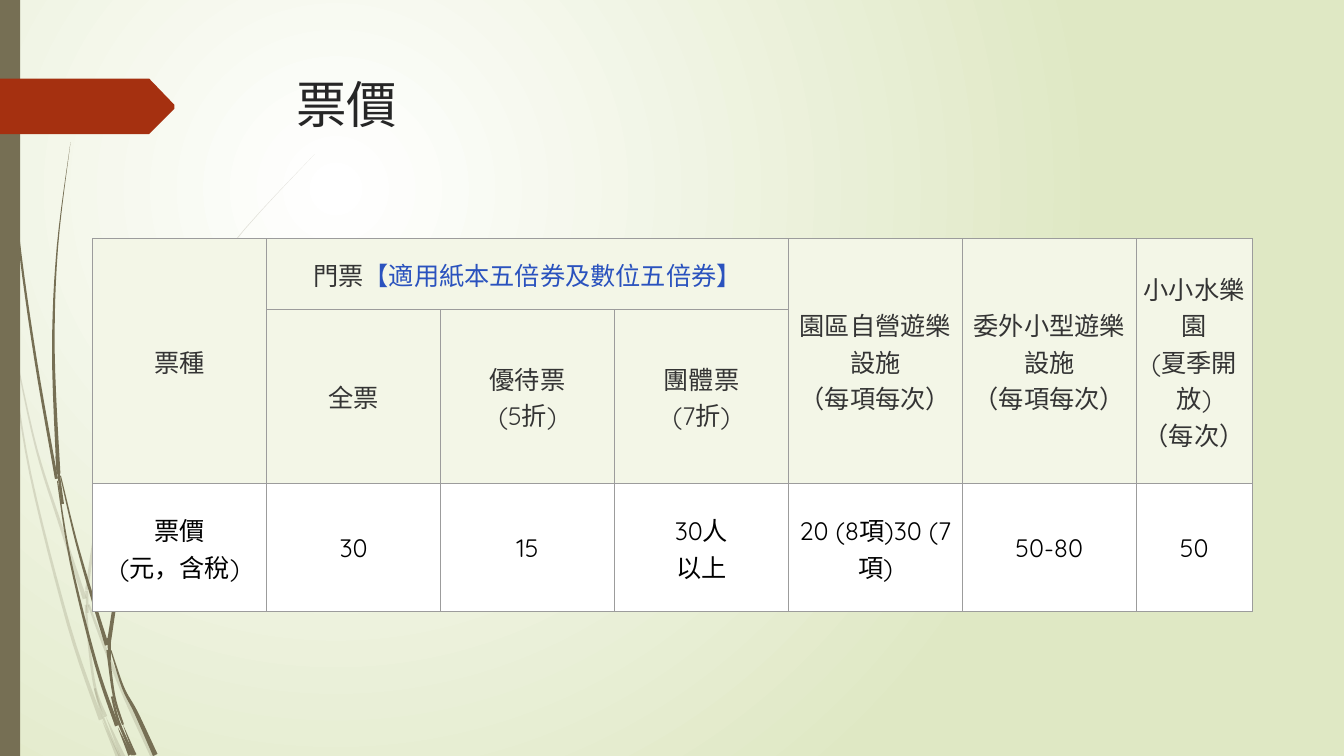
import math

from lxml import etree
from pptx import Presentation
from pptx import util as u
from pptx.dml.color import RGBColor
from pptx.enum import shapes, text
from pptx.oxml import ns

PX = 9144  # EMU in one px, 100 px to the inch
SLIDE = (1333, 750)


class Theme:
    font = "Quicksand"
    title_size, table_size = 36, 18
    glow, meadow = "FFFFFF", "DFE8C4"
    stem, marker = "766F54", "A53010"
    title_ink, head_ink, price_ink, notice = "262626", "343434", "000000", "2A52BE"
    head_fill, price_fill, border = "F3F6E7", "FFFFFF", "9C9C9C"
    border_width = 0.75
    pale = 20  # opacity of the rear grass, percent


TITLE = "票價"
TITLE_BOX = (284, 68, 975, 140)
TABLE_BOX = (92, 237, 1150, 370)
COLUMN_SHARES = [15] * 6 + [10]  # percent of the table width
ROW_HEIGHTS = [70, 173, 127]
MERGES = [((0, 0), (1, 0)), ((0, 1), (0, 3))] + [((0, c), (1, c)) for c in (4, 5, 6)]
NOTICE = "【適用紙本五倍券及數位五倍券】"
ROWS = [
    ["票種", "門票" + NOTICE, "", "", "園區自營遊樂設施\n（每項每次）",
     "委外小型遊樂設施\n（每項每次）", "小小水樂園\n(夏季開放)\n（每次）"],
    ["", "全票", "優待票\n(5折)", "團體票\n(7折)", "", "", ""],
    ["票價\n(元，含稅)", "30", "15", "30人\n以上", "20 (8項)30 (7項)", "50-80", "50"],
]

MARKER = [(173, 108), (148, 133), (0, 133), (0, 78), (148, 78), (173, 104)]

# Each blade of grass: width at the top, width at the foot, points of its middle line
REAR_GRASS = [
    (5, 1, [(0, 291), (6, 315), (11, 350)]),
    (1, 4, [(15, 350), (36, 445), (60, 521), (84, 594)]),
    (2, 5, [(88, 600), (105, 645), (125, 693), (152, 751)]),
    (0, 5, [(105, 711), (122, 751)]),
    (1, 4, [(11, 350), (30, 470), (68, 620), (100, 714)]),
    (2, 3, [(85, 600), (89, 646), (95, 685), (105, 711)]),
    (0, 3, [(312, 153), (229, 244), (159, 348), (108, 462), (86, 585)]),
    (0, 4, [(101, 714), (117, 751)]),
    (3, 2, [(86, 586), (87, 608)]),
    (2, 2, [(94, 683), (102, 711), (119, 751)]),
]
FRONT_GRASS = [
    (1, 3, [(4, 0), (7, 110), (18, 233), (35, 355), (56, 475)]),
    (1, 4, [(60, 472), (75, 535), (91, 591), (106, 640)]),
    (1, 5, [(110, 645), (122, 682), (135, 707), (154, 749)]),
    (1, 4, [(57, 477), (70, 557), (95, 658), (116, 720)]),
    (0, 4, [(70, 141), (57, 245), (53, 349), (58, 470)]),
    (0, 3, [(122, 719), (134, 749)]),
    (2, 3, [(56, 453), (62, 500)]),
    (0, 4, [(260, 344), (205, 405), (157, 475), (124, 551), (108, 637)]),
    (0, 4, [(117, 722), (129, 749)]),
    (3, 2, [(107, 645), (113, 690), (122, 719)]),
    (4, 2, [(108, 633), (109, 655)]),
    (2, 3, [(111, 691), (118, 717), (132, 749)]),
]


def emu(lengths):
    return [u.Emu(round(length * PX)) for length in lengths]


def add_xml(parent, tag, **attributes):
    return etree.SubElement(parent, ns.qn(tag), attributes)


def smooth_line(points, steps=6):
    """Run a Catmull-Rom curve through the points."""
    padded = [points[0], *points, points[-1]]
    curve = []
    for a, b, c, d in zip(padded, padded[1:], padded[2:], padded[3:]):
        for t in (step / steps for step in range(steps)):
            weights = (-t + 2 * t**2 - t**3, 2 - 5 * t**2 + 3 * t**3,
                       t + 4 * t**2 - 3 * t**3, t**3 - t**2)
            curve.append(tuple(sum(w * p[axis] for w, p in zip(weights, (a, b, c, d))) / 2
                               for axis in (0, 1)))
    return curve + [points[-1]]


def blade_outline(top, foot, points):
    """Give the middle line a width that grows evenly from top to foot."""
    curve = smooth_line(points)
    last = len(curve) - 1
    left, right = [], []
    for i, (x, y) in enumerate(curve):
        before, after = curve[max(i - 1, 0)], curve[min(i + 1, last)]
        dx, dy = after[0] - before[0], after[1] - before[1]
        half = (top + (foot - top) * i / last) / 2 / math.hypot(dx, dy)
        left.append((x - dy * half, y + dx * half))
        right.append((x + dy * half, y - dx * half))
    return left + right[::-1]


def paint(shape, color, opacity=100):
    shape.shadow.inherit = False
    shape.line.fill.background()
    shape.fill.solid()
    shape.fill.fore_color.rgb = RGBColor.from_string(color)
    if opacity < 100:
        tint = next(shape.element.spPr.iter(ns.qn("a:srgbClr")))
        add_xml(tint, "a:alpha", val=str(opacity * 1000))


def add_outline(page, points, color, opacity=100):
    start, *rest = [emu(point) for point in points]
    builder = page.shapes.build_freeform(*start, scale=1.0)
    builder.add_line_segments(rest, close=True)
    paint(builder.convert_to_shape(), color, opacity)


def write(para, words, size, color, align=text.PP_ALIGN.LEFT):
    para.alignment = align
    for i, line in enumerate(words.split("\n")):
        if i:
            para.add_line_break()
        span = para.add_run()
        span.text = line
        span.font.name = Theme.font
        span.font.size = u.Pt(size)
        span.font.color.rgb = RGBColor.from_string(color)


def set_background(page):
    fill = page.background.fill
    fill.gradient()
    for stop, color in zip(fill.gradient_stops, (Theme.glow, Theme.meadow)):
        stop.color.rgb = RGBColor.from_string(color)
    gradient = next(page.element.iter(ns.qn("a:gradFill")))
    gradient.remove(gradient.find(ns.qn("a:lin")))
    circle = add_xml(gradient, "a:path", path="circle")
    add_xml(circle, "a:fillToRect", l="50000", t="50000", r="100000", b="100000")


def style_cell(cell, fill):
    cell.vertical_anchor = text.MSO_ANCHOR.MIDDLE
    cell.margin_left = cell.margin_right = cell.margin_top = cell.margin_bottom = 3 * PX
    properties = cell._tc.get_or_add_tcPr()
    for side in ("a:lnL", "a:lnR", "a:lnT", "a:lnB"):
        line = add_xml(properties, side, w=str(int(u.Pt(Theme.border_width))))
        add_xml(add_xml(line, "a:solidFill"), "a:srgbClr", val=Theme.border)
    cell.fill.solid()
    cell.fill.fore_color.rgb = RGBColor.from_string(fill)


def add_prices(page):
    table = page.shapes.add_table(len(ROWS), len(COLUMN_SHARES), *emu(TABLE_BOX)).table
    for column, share in zip(table.columns, COLUMN_SHARES):
        column.width = emu([TABLE_BOX[2] * share / 100])[0]
    for row, height in zip(table.rows, emu(ROW_HEIGHTS)):
        row.height = height
    for first, last in MERGES:
        table.cell(*first).merge(table.cell(*last))
    for r, row in enumerate(ROWS):
        is_price = r == len(ROWS) - 1
        ink = Theme.price_ink if is_price else Theme.head_ink
        for c, words in enumerate(row):
            cell = table.cell(r, c)
            style_cell(cell, Theme.price_fill if is_price else Theme.head_fill)
            label, notice, _ = words.partition(NOTICE)
            for part, color in ((label, ink), (notice, Theme.notice)):
                if part:
                    write(cell.text_frame.paragraphs[0], part, Theme.table_size, color,
                          align=text.PP_ALIGN.CENTER)


def main():
    deck = Presentation()
    deck.slide_width, deck.slide_height = emu(SLIDE)
    page = deck.slides.add_slide(deck.slide_layouts[6])
    set_background(page)
    for grass, opacity in ((REAR_GRASS, Theme.pale), (FRONT_GRASS, 100)):
        for blade in grass:
            add_outline(page, blade_outline(*blade), Theme.stem, opacity)
    band = page.shapes.add_shape(shapes.MSO_SHAPE.RECTANGLE, *emu((0, 0, 20, SLIDE[1])))
    paint(band, Theme.stem)
    add_outline(page, MARKER, Theme.marker)
    box = page.shapes.add_textbox(*emu(TITLE_BOX))
    box.text_frame.word_wrap = True
    write(box.text_frame.paragraphs[0], TITLE, Theme.title_size, Theme.title_ink)
    add_prices(page)
    deck.save("out.pptx")


if __name__ == "__main__":
    main()
